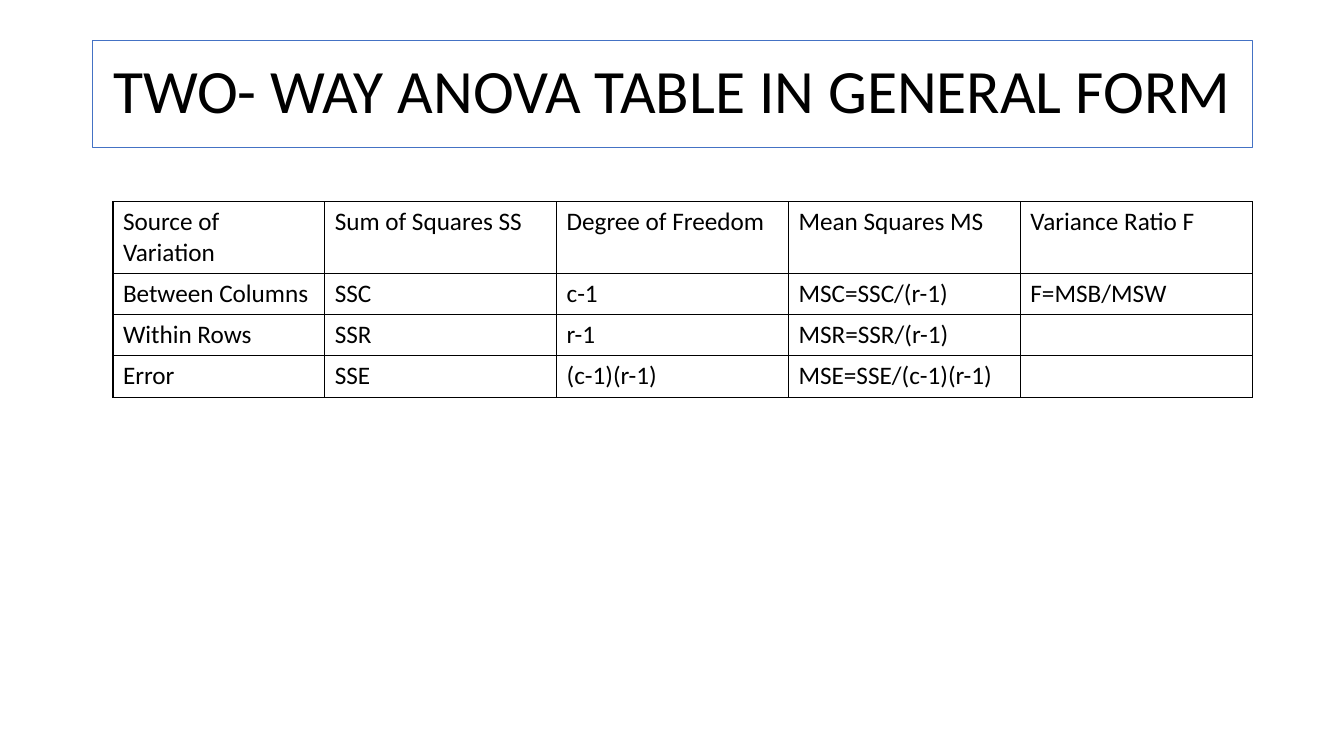
import lxml.etree
import pptx
import pptx.dml.color
import pptx.enum.text
import pptx.oxml.ns
import pptx.util

Inches = pptx.util.Inches
Pt = pptx.util.Pt
BLACK = pptx.dml.color.RGBColor(0x00, 0x00, 0x00)
WHITE = pptx.dml.color.RGBColor(0xFF, 0xFF, 0xFF)
BLUE = pptx.dml.color.RGBColor(0x44, 0x72, 0xC4)

TITLE_FONT = {"name": "Calibri", "size": Pt(44)}
CELL_FONT = {"name": "Calibri", "size": Pt(18)}
COLUMN_WIDTHS = [2.1, 2.3, 2.3, 2.3, 2.3]
HEADER_HEIGHT = 0.7
ROW_HEIGHT = 0.41
ANOVA_ROWS = [
    ["Source of Variation", "Sum of Squares SS", "Degree of Freedom",
     "Mean Squares MS", "Variance Ratio F"],
    ["Between Columns", "SSC", "c-1", "MSC=SSC/(r-1)", "F=MSB/MSW"],
    ["Within Rows", "SSR", "r-1", "MSR=SSR/(r-1)", ""],
    ["Error", "SSE", "(c-1)(r-1)", "MSE=SSE/(c-1)(r-1)", ""],
]


def apply_format(target, values):
    for attribute, value in values.items():
        setattr(target, attribute, value)


def write_text(paragraph, text, font_values):
    run = paragraph.add_run()
    run.text = text
    apply_format(run.font, font_values)
    run.font.color.rgb = BLACK


def add_borders(cell):
    qn = pptx.oxml.ns.qn
    properties = cell._tc.get_or_add_tcPr()
    for side in ("a:lnL", "a:lnR", "a:lnT", "a:lnB"):
        border = lxml.etree.SubElement(properties, qn(side), w=str(Pt(1)))
        fill = lxml.etree.SubElement(border, qn("a:solidFill"))
        lxml.etree.SubElement(fill, qn("a:srgbClr"), val=str(BLACK))


def place_title(slide, left, top, width, height):
    heading = slide.shapes.title
    apply_format(heading, {"left": Inches(left), "top": Inches(top),
                           "width": Inches(width), "height": Inches(height)})
    heading.line.color.rgb = BLUE
    heading.line.width = Pt(0.75)
    apply_format(heading.text_frame, {
        "word_wrap": True,
        "auto_size": pptx.enum.text.MSO_AUTO_SIZE.NONE,
        "vertical_anchor": pptx.enum.text.MSO_ANCHOR.MIDDLE,
    })
    paragraph = heading.text_frame.paragraphs[0]
    apply_format(paragraph, {"alignment": pptx.enum.text.PP_ALIGN.CENTER,
                             "line_spacing": 0.9})
    write_text(paragraph, "TWO- WAY ANOVA TABLE IN GENERAL FORM", TITLE_FONT)


def place_anova_table(slide, left, top):
    heights = [HEADER_HEIGHT] + [ROW_HEIGHT] * (len(ANOVA_ROWS) - 1)
    anova = slide.shapes.add_table(
        len(heights), len(COLUMN_WIDTHS), Inches(left), Inches(top),
        Inches(sum(COLUMN_WIDTHS)), Inches(sum(heights))).table
    apply_format(anova, {"first_row": False, "horz_banding": False})
    for column, width in zip(anova.columns, COLUMN_WIDTHS):
        column.width = Inches(width)
    for row, height, entries in zip(anova.rows, heights, ANOVA_ROWS):
        row.height = Inches(height)
        for cell, entry in zip(row.cells, entries):
            add_borders(cell)
            cell.fill.solid()
            cell.fill.fore_color.rgb = WHITE
            if entry:
                write_text(cell.text_frame.paragraphs[0], entry, CELL_FONT)


def main():
    presentation = pptx.Presentation()
    presentation.slide_width = Inches(13.33)
    presentation.slide_height = Inches(7.5)
    slide = presentation.slides.add_slide(presentation.slide_layouts[5])
    place_title(slide, 0.92, 0.4, 11.5, 1.06)
    place_anova_table(slide, 1.12, 2)
    presentation.save("out.pptx")


if __name__ == "__main__":
    main()
